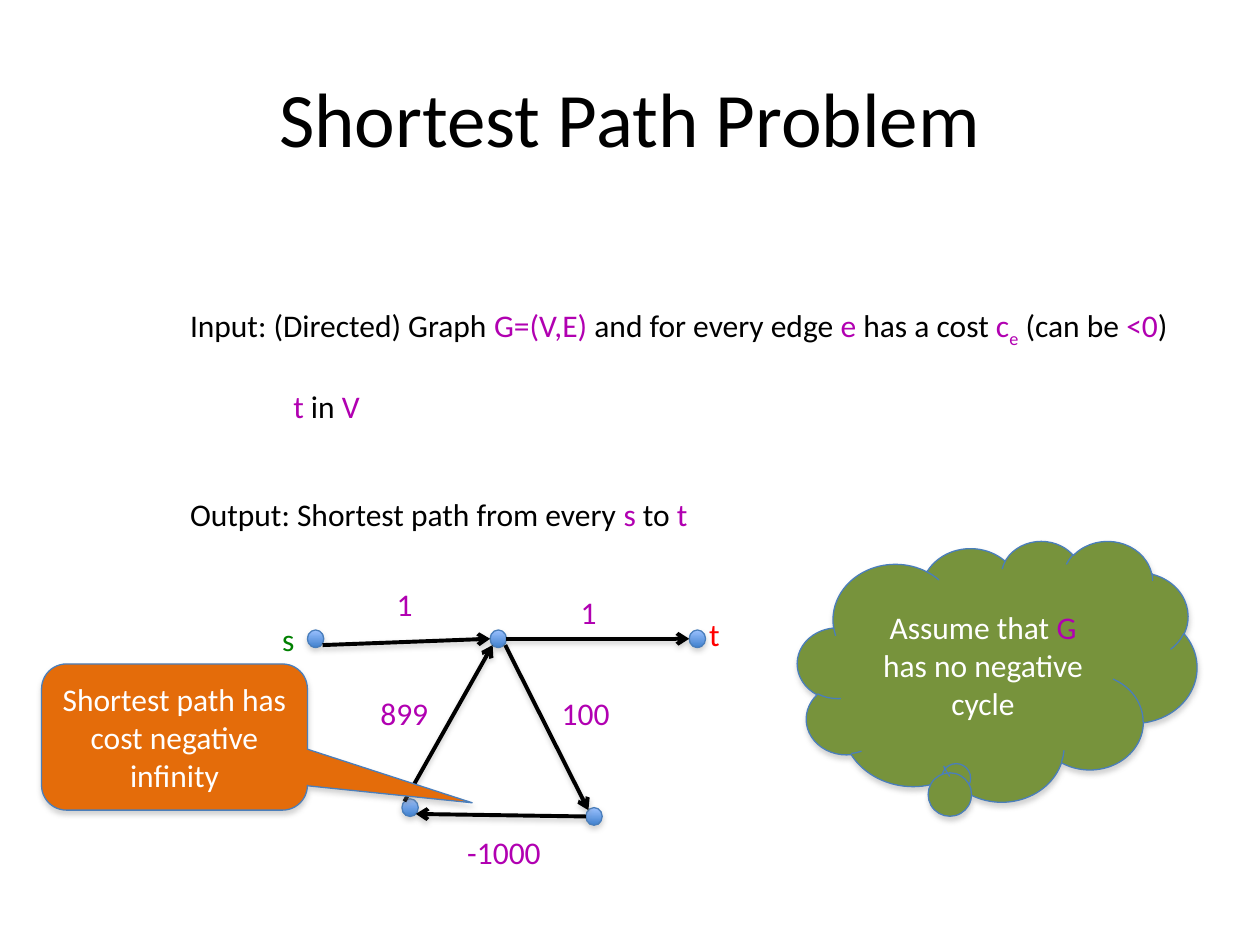
from lxml import etree
from pptx import Presentation
from pptx.dml.color import RGBColor
from pptx.enum import shapes, text
from pptx.oxml import ns
from pptx.util import Inches, Pt

BLACK, WHITE, PURPLE, BLUE = "000000", "FFFFFF", "B100B1", "4A7EBB"


def rgb(value):
    """Turn a hex string into a colour."""
    return RGBColor.from_string(value)


def add_shadow(sp, alpha, dist):
    """Give a shape or connector a soft grey shadow below it."""
    effects = etree.SubElement(sp._element.spPr, ns.qn("a:effectLst"))
    outer = etree.SubElement(effects, ns.qn("a:outerShdw"), blurRad=str(Pt(3.1)),
                             dist=str(Pt(dist)), dir="5400000", rotWithShape="0")
    color = etree.SubElement(outer, ns.qn("a:srgbClr"), val="808080")
    etree.SubElement(color, ns.qn("a:alpha"), val=str(alpha * 1000))


def write_runs(tf, runs, size=18, align=text.PP_ALIGN.LEFT):
    """Write one paragraph from (text, colour, optional baseline) runs."""
    p = tf.paragraphs[0]
    p.alignment = align
    for words, color, *baseline in runs:
        r = p.add_run()
        r.text = words
        r.font.name, r.font.size = "Calibri", Pt(size)
        r.font.color.rgb = rgb(color)
        if baseline:
            r._r.get_or_add_rPr().set("baseline", str(baseline[0]))


def add_text(parent, x, y, w, runs):
    """Add a one-line text box that grows with its text."""
    tf = parent.add_textbox(Inches(x), Inches(y), Inches(w), Inches(0.4)).text_frame
    tf.word_wrap = False
    tf.auto_size = text.MSO_AUTO_SIZE.SHAPE_TO_FIT_TEXT
    write_runs(tf, runs)


def add_title(parent, words):
    """Add the centred slide title."""
    tf = parent.add_textbox(Inches(0.5), Inches(0.3), Inches(9), Inches(1.25)).text_frame
    tf.word_wrap = True
    tf.vertical_anchor = text.MSO_ANCHOR.MIDDLE
    write_runs(tf, [(words, BLACK)], 44, text.PP_ALIGN.CENTER)


def add_outlined(parent, kind, x, y, w, h):
    """Add a preset shape with a thin blue outline and a shadow."""
    sp = parent.add_shape(kind, Inches(x), Inches(y), Inches(w), Inches(h))
    sp.line.color.rgb = rgb(BLUE)
    sp.line.width = Pt(0.75)
    add_shadow(sp, 35, 1.8)
    return sp


def add_node(parent, x, y):
    """Add a graph node with a vertical blue gradient."""
    fill = add_outlined(parent, shapes.MSO_SHAPE.OVAL, x, y, 0.13, 0.14).fill
    fill.gradient()
    fill.gradient_angle = 270
    for stop, color, position in zip(fill.gradient_stops, ("9BC1FF", "3F80CD"), (0, 1)):
        stop.color.rgb = rgb(color)
        stop.position = position


def add_edge(parent, start, end):
    """Add a directed graph edge."""
    line = parent.add_connector(shapes.MSO_CONNECTOR.STRAIGHT,
                                *(Inches(v) for v in (*start, *end)))
    line.line.color.rgb = rgb(BLACK)
    line.line.width = Pt(2.25)
    etree.SubElement(line.line._get_or_add_ln(), ns.qn("a:tailEnd"), type="arrow")
    add_shadow(line, 38, 1.6)


def add_callout(parent, kind, box, adjustments, color, runs):
    """Add a filled callout with centred text."""
    sp = add_outlined(parent, kind, *box)
    for i, value in enumerate(adjustments):
        sp.adjustments[i] = value
    sp.fill.solid()
    sp.fill.fore_color.rgb = rgb(color)
    tf = sp.text_frame
    tf.word_wrap = True
    tf.vertical_anchor = text.MSO_ANCHOR.MIDDLE
    write_runs(tf, runs, align=text.PP_ALIGN.CENTER)


def add_graph(parent):
    """Add the example graph with its nodes, edges and labels."""
    for x, y in [(2.44, 5), (3.89, 5), (5.47, 5), (4.65, 6.41), (3.19, 6.34)]:
        add_node(parent, x, y)
    for start, end in [((2.56, 5.12), (3.89, 5.07)), ((4.02, 5.07), (5.47, 5.07)),
                       ((4.01, 5.12), (4.67, 6.43)), ((4.65, 6.48), (3.3, 6.46)),
                       ((3.21, 6.36), (3.91, 5.12))]:
        add_edge(parent, start, end)
    for x, y, w, label, color in [
            (3.05, 4.59, 0.33, "1", PURPLE), (4.51, 4.66, 0.33, "1", PURPLE),
            (4.36, 5.46, 0.59, "100", PURPLE), (3.61, 6.56, 0.79, "-1000", PURPLE),
            (2.92, 5.46, 0.59, "899", PURPLE), (2.14, 4.87, 0.3, "s", "008000"),
            (5.53, 4.83, 0.29, "t", "FF0000")]:
        add_text(parent, x, y, w, [(label, color)])


def main():
    """Build the shortest path slide."""
    prs = Presentation()
    prs.slide_width, prs.slide_height = Inches(10), Inches(7.5)
    s = prs.slides.add_slide(prs.slide_layouts[6])
    add_title(s.shapes, "Shortest Path Problem")
    add_text(s.shapes, 1.41, 2.38, 8.05, [
        ("Input: (Directed) Graph ", BLACK), ("G=(V,E)", PURPLE),
        (" and for every edge ", BLACK), ("e", PURPLE), (" has a cost ", BLACK),
        ("c", PURPLE), ("e", PURPLE, -25000), (" (can be ", BLACK),
        ("<0", PURPLE), (")", BLACK)])
    add_text(s.shapes, 2.23, 3.02, 0.73, [("t", PURPLE), (" in ", BLACK), ("V", PURPLE)])
    add_text(s.shapes, 1.41, 3.88, 4.19, [
        ("Output: Shortest path from every ", BLACK), ("s", PURPLE),
        (" to ", BLACK), ("t", PURPLE)])
    add_graph(s.shapes.add_group_shape().shapes)
    add_callout(s.shapes, shapes.MSO_SHAPE.ROUNDED_RECTANGULAR_CALLOUT,
                (0.33, 5.27, 2.11, 1.16), (1.12, 0.45, 0.17), "E46C0A",
                [("Shortest path has cost negative infinity", WHITE)])
    add_callout(s.shapes, shapes.MSO_SHAPE.CLOUD_CALLOUT,
                (6.33, 4.29, 3.17, 2.07), (-0.1, 0.4), "77933C",
                [("Assume that ", WHITE), ("G", PURPLE), (" has no negative cycle", WHITE)])
    prs.save("out.pptx")


if __name__ == "__main__":
    main()
